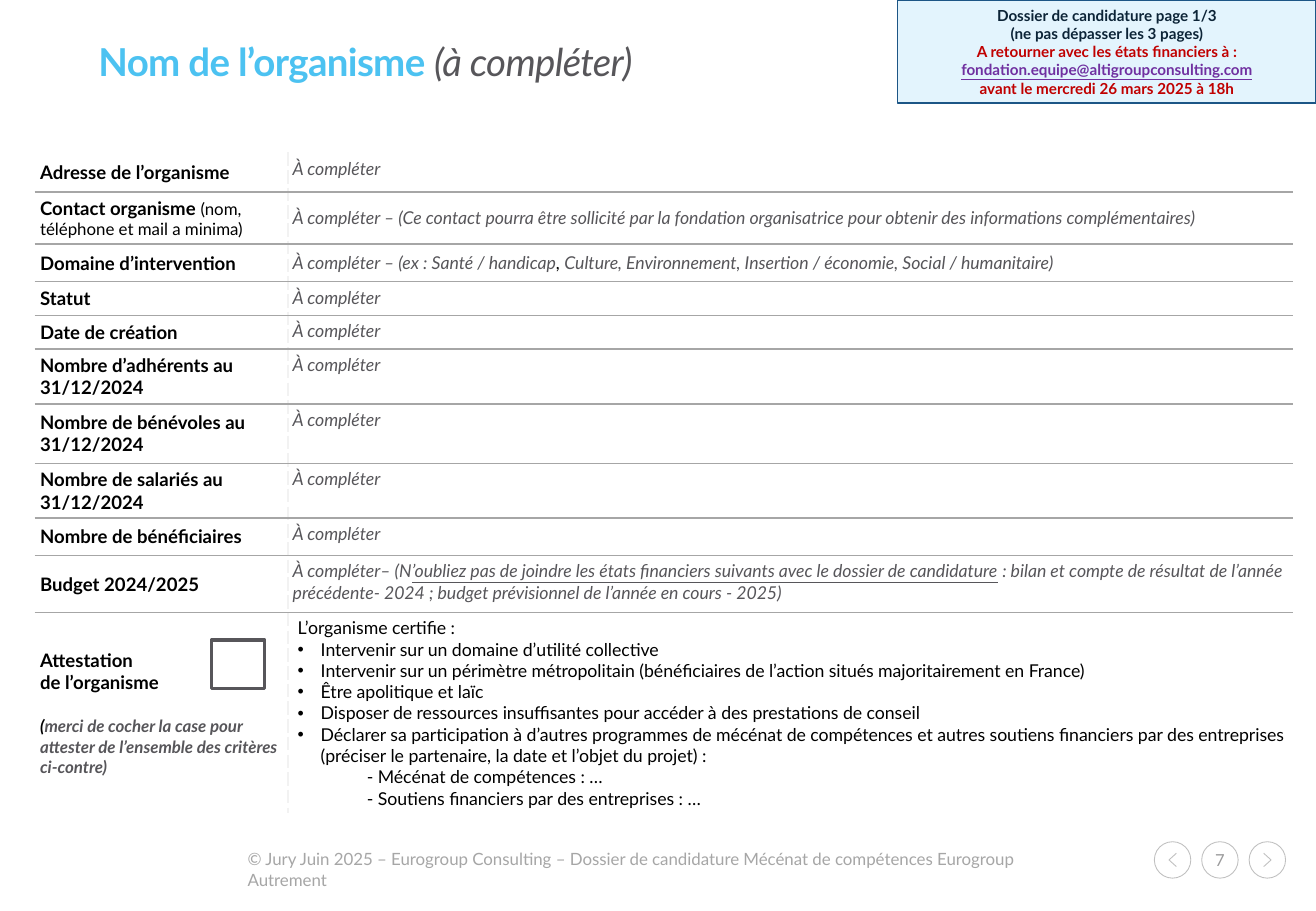
from dataclasses import dataclass
from lxml.etree import SubElement
from pptx import Presentation
from pptx.dml.color import RGBColor
from pptx.enum.shapes import MSO_SHAPE
from pptx.enum.text import MSO_ANCHOR, PP_ALIGN
from pptx.oxml.ns import qn
from pptx.util import Inches, Pt

FONT = "Lato"
BLACK, GREY, RULE, DASH, RED = "000000", "57565A", "A6A6A6", "F2F2F2", "C00000"
W, H = Inches(10.83), Inches(7.5)


@dataclass
class Run:
    text: str
    size: float = 10.5
    color: str = BLACK
    bold: bool = False
    italic: bool = False
    underline: bool = False
    spacing: int = 0


@dataclass
class Para:
    runs: list[Run]
    align: PP_ALIGN = PP_ALIGN.LEFT
    left: float = 0
    bullet: bool = False
    before: float = 0
    line: float = 1


@dataclass
class Row:
    height: float  # share of slide height, in percent
    label: list[Para]
    answer: list[Para]
    middle: bool = False


def px(share: float) -> int:
    return round(W * share / 100)


def py(share: float) -> int:
    return round(H * share / 100)


def rgb(color: str) -> RGBColor:
    return RGBColor.from_string(color)


def write(tf, paras: list[Para]) -> None:
    for i, para in enumerate(paras):
        p = tf.paragraphs[0] if i == 0 else tf.add_paragraph()
        p.alignment, p.line_spacing = para.align, para.line
        if para.before:
            p.space_before = Pt(para.before)
        pPr = p._p.get_or_add_pPr()
        pPr.set("marL", str(Inches(para.left)))
        if para.bullet:
            pPr.set("indent", str(-Inches(para.left)))
            SubElement(pPr, qn("a:buFont")).set("typeface", "Arial")
            SubElement(pPr, qn("a:buChar")).set("char", "•")
        for run in para.runs:
            r = p.add_run()
            r.text = run.text
            f = r.font
            f.name, f.size, f.color.rgb = FONT, Pt(run.size), rgb(run.color)
            f.bold, f.italic, f.underline = run.bold, run.italic, run.underline
            if run.spacing:
                r._r.get_or_add_rPr().set("spc", str(run.spacing))


def add_box(s, kind: MSO_SHAPE, x: float, y: float, w: float, h: float,
            line: str, width: float, fill: str = ""):
    sp = s.shapes.add_shape(kind, px(x), py(y), px(w), py(h))
    outline(sp, line, width)
    if fill:
        sp.fill.solid()
        sp.fill.fore_color.rgb = rgb(fill)
    return sp


def outline(sp, color: str, width: float) -> None:
    sp.shadow.inherit = False
    sp.fill.background()
    sp.line.color.rgb, sp.line.width = rgb(color), Pt(width)


def add_text(s, x: float, y: float, w: float, h: float, paras: list[Para]):
    tf = s.shapes.add_textbox(px(x), py(y), px(w), py(h)).text_frame
    tf.word_wrap = True
    write(tf, paras)
    return tf


def add_borders(cell, borders: dict[str, tuple[str, str]]) -> None:
    tcPr = cell._tc.get_or_add_tcPr()
    for i, side in enumerate(k for k in "LRTB" if k in borders):
        color, dash = borders[side]
        ln = SubElement(tcPr, qn(f"a:ln{side}"), w=str(Pt(1)))
        SubElement(SubElement(ln, qn("a:solidFill")), qn("a:srgbClr"), val=color)
        SubElement(ln, qn("a:prstDash"), val=dash)
        tcPr.insert(i, ln)


def add_form(s, x: float, y: float, cols: list[float], rows: list[Row]) -> None:
    total = sum(row.height for row in rows)
    table = s.shapes.add_table(len(rows), len(cols), px(x), py(y),
                               px(sum(cols)), py(total)).table
    table.first_row = table.horz_banding = False
    for col, width in zip(table.columns, cols):
        col.width = px(width)
    for i, row in enumerate(rows):
        table.rows[i].height = py(row.height)
        for j, paras in enumerate((row.label, row.answer)):
            cell = table.cell(i, j)
            cell.fill.solid()
            cell.fill.fore_color.rgb = rgb("FFFFFF")
            borders = {"L" if j else "R": (DASH, "sysDash")}
            if i > 0:
                borders["T"] = (RULE, "solid")
            if i < len(rows) - 1:
                borders["B"] = (RULE, "solid")
            add_borders(cell, borders)
            cell.margin_left = cell.margin_right = Inches(0.04)
            cell.margin_top = cell.margin_bottom = Inches(0.04)
            middle = j == 0 or row.middle
            cell.vertical_anchor = MSO_ANCHOR.MIDDLE if middle else MSO_ANCHOR.TOP
            write(cell.text_frame, paras)
    table.cell(len(rows) - 1, 1).margin_left = Inches(0.08)


def label(text: str, *more: Run) -> list[Para]:
    return [Para([Run(text, 11, bold=True), *more])]


def hint(text: str = "À compléter", **style) -> Run:
    return Run(text, color=GREY, italic=True, **style)


def answer(*runs: Run) -> list[Para]:
    return [Para(list(runs) or [hint()])]


CRITERIA = [
    "Intervenir sur un domaine d’utilité collective",
    "Intervenir sur un périmètre métropolitain (bénéficiaires de l’action situés majoritairement en France)",
    "Être apolitique et laïc",
    "Disposer de ressources insuffisantes pour accéder à des prestations de conseil",
    "Déclarer sa participation à d’autres programmes de mécénat de compétences et autres soutiens financiers "
    "par des entreprises (préciser le partenaire, la date et l’objet du projet) :",
]
SUPPORTS = ["- Mécénat de compétences : …", "- Soutiens financiers par des entreprises : …"]
ROWS = [
    Row(4.27, label("Adresse de l’organisme"), answer()),
    Row(5.73, label("Contact organisme ", Run("(nom, téléphone et mail a minima)", 10)),
        answer(hint("À compléter – (Ce contact pourra être sollicité par la fondation organisatrice "
                    "pour obtenir des informations complémentaires)")), True),
    Row(4.13, label("Domaine d’intervention"),
        answer(hint("À compléter – (ex : Santé / handicap"), Run(", ", italic=True),
               hint("Culture, Environnement, Insertion / économie, Social / humanitaire)")), True),
    Row(3.73, label("Statut"), answer()),
    Row(3.67, label("Date de création"), answer()),
    Row(6, label("Nombre d’adhérents au 31/12/2024"), answer()),
    Row(6.53, label("Nombre de bénévoles au 31/12/2024"), answer()),
    Row(6, label("Nombre de salariés au 31/12/2024"), answer()),
    Row(4.13, label("Nombre de bénéficiaires"), answer()),
    Row(6.27, label("Budget 2024/2025"),
        answer(hint("À compléter– (N"),
               hint("’oubliez pas de joindre les états financiers suivants avec le dossier de candidature",
                    underline=True),
               hint(" : bilan et compte de résultat de l’année précédente- 2024 ; "
                    "budget prévisionnel de l’année en cours - 2025)"))),
    Row(22, label("Attestation") + label("de l’organisme") + [
        Para([Run("(", 10, bold=True, italic=True),
              hint("merci de cocher la case pour attester de l’ensemble des critères ci-contre)",
                   size=10, bold=True)], before=13.2)],
        answer(Run("L’organisme certifie :"))
        + [Para([Run(text)], left=0.19, bullet=True) for text in CRITERIA]
        + [Para([Run(text)], left=0.57) for text in SUPPORTS], True),
]
BANNER = [
    Run("Dossier de candidature page 1/3", 9, "0C2437", True),
    Run("(ne pas dépasser les 3 pages)", 9, "0C2437", True),
    Run("A retourner avec les états financiers à :", 9, RED, True),
    Run("fondation.equipe@altigroupconsulting.com", 9, "7030A0", True, underline=True),
    Run("avant le mercredi 26 mars 2025 à 18h", 9, RED, True),
]

prs = Presentation()
prs.slide_width, prs.slide_height = W, H
s = prs.slides.add_slide(prs.slide_layouts[6])

# Footer
add_text(s, 17.91, 92.53, 64.27, 3.6, [Para([Run(
    "© Jury Juin 2025 – Eurogroup Consulting – Dossier de candidature "
    "Mécénat de compétences Eurogroup Autrement", 10, RULE)])])

# Page navigation: previous, number, next
for i, side in enumerate((-1, 0, 1)):
    x = 87.72 + 3.6 * i
    sp = add_box(s, MSO_SHAPE.OVAL, x, 92.4, 2.77, 4, "BFBFBF", 0.5)
    if side:
        mid, y = x + 1.39, 94.4
        back, tip = px(mid - 0.28 * side), px(mid + 0.28 * side)
        fb = s.shapes.build_freeform(back, py(y - 0.73))
        fb.add_line_segments([(tip, py(y)), (back, py(y + 0.73))], close=False)
        outline(fb.convert_to_shape(), "BFBFBF", 0.5)
    else:
        tf = sp.text_frame
        tf.margin_left = tf.margin_right = tf.margin_top = tf.margin_bottom = 0
        tf.vertical_anchor = MSO_ANCHOR.MIDDLE
        write(tf, [Para([Run("7", 9.8, "9A9A9B")], PP_ALIGN.CENTER)])

# Title
tf = add_text(s, 7.48, 4.67, 85, 4.93, [Para([
    Run("Nom de l’organisme ", 22.8, "4CC2F1", True, spacing=-40),
    Run("(à compléter)", 22.8, GREY, italic=True, spacing=-40)], line=0.86)])
tf.margin_left = tf.margin_right = tf.margin_top = tf.margin_bottom = 0
tf.vertical_anchor = MSO_ANCHOR.MIDDLE

# Form and its tick box
add_form(s, 2.68, 16.8, [19.2, 76.34], ROWS)
add_box(s, MSO_SHAPE.RECTANGLE, 16.06, 70.27, 4.06, 5.33, GREY, 2, "FFFFFF")

# Return instructions
sp = add_box(s, MSO_SHAPE.RECTANGLE, 68.2, 0, 31.8, 11.33, "1C5686", 0.75, "E3F4FD")
sp.text_frame.vertical_anchor = MSO_ANCHOR.MIDDLE
write(sp.text_frame, [Para([run], PP_ALIGN.CENTER) for run in BANNER])

prs.save("out.pptx")
